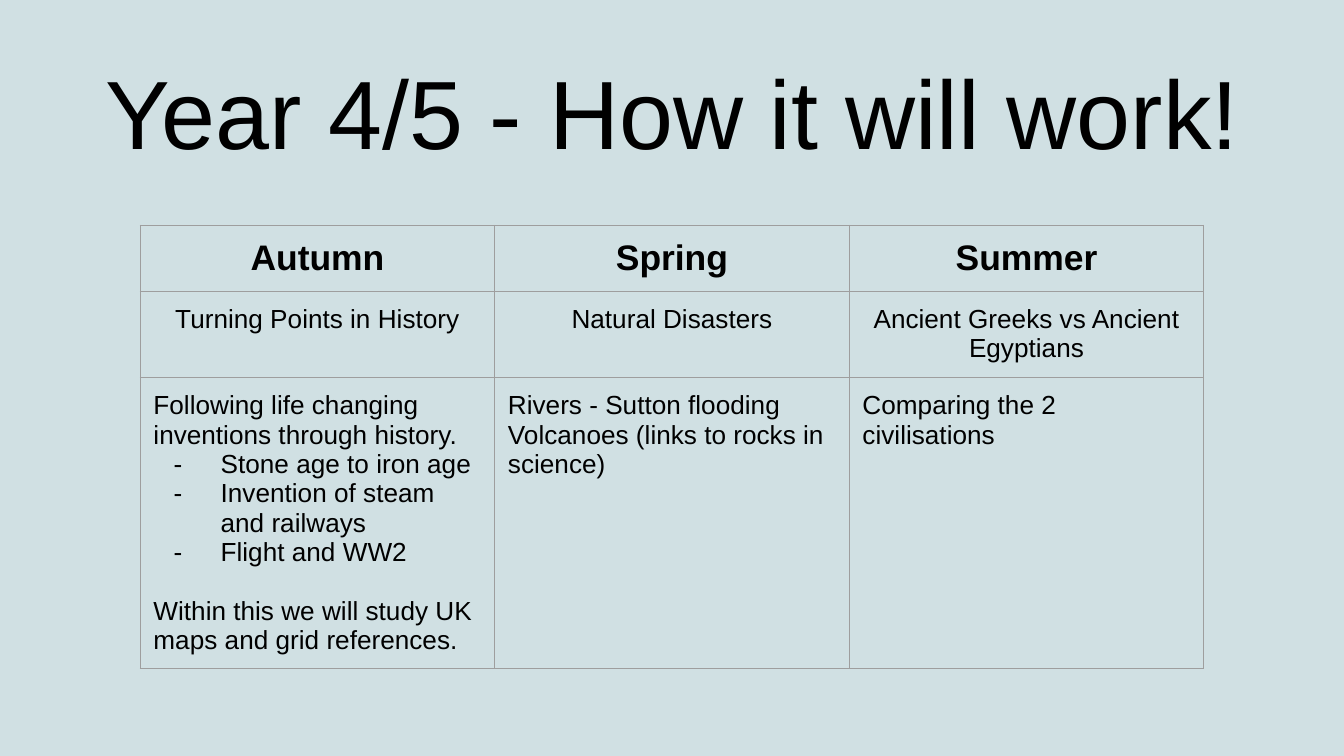
from lxml import etree
from pptx import Presentation
from pptx.dml.color import RGBColor
from pptx.enum import text
from pptx.oxml import parse_xml
from pptx.oxml.ns import nsdecls, qn
from pptx.util import Cm, Pt


def style(para, size, bold=False):
    font = para.font
    font.name, font.size, font.bold = "Arial", Pt(size), bold
    font.color.rgb = RGBColor.from_string("000000")


def fill_in(area, hue):
    area.solid()
    area.fore_color.rgb = RGBColor.from_string(hue)


deck = Presentation()
deck.slide_width, deck.slide_height = Cm(25.4), Cm(14.29)
slide = deck.slides.add_slide(deck.slide_layouts[5])
fill_in(slide.background.fill, "D0E0E3")

# Title
title = slide.shapes.title
title.left, title.top = Cm(0.87), Cm(0.75)
title.width, title.height = Cm(23.67), Cm(2.7)
frame = title.text_frame
frame.text = "Year 4/5 - How it will work!"
frame.word_wrap = True
frame.auto_size = text.MSO_AUTO_SIZE.NONE
frame.vertical_anchor = text.MSO_ANCHOR.BOTTOM
frame.margin_left = frame.margin_right = Cm(0.25)
frame.margin_top = frame.margin_bottom = Cm(0.25)
frame.paragraphs[0].alignment = text.PP_ALIGN.CENTER
style(frame.paragraphs[0], 52)

# Terms, topics and details; a leading "- " marks a list item
rows = [
    ["Autumn", "Spring", "Summer"],
    ["Turning Points in History", "Natural Disasters",
     "Ancient Greeks vs Ancient Egyptians"],
    ["Following life changing inventions through history.\n"
     "- Stone age to iron age\n"
     "- Invention of steam and railways\n"
     "- Flight and WW2\n"
     "Within this we will study UK maps and grid references.",
     "Rivers - Sutton flooding\nVolcanoes (links to rocks in science)",
     "Comparing the 2 civilisations"],
]
highs = [1.25, 1.63, 5.5]
grid = slide.shapes.add_table(3, 3, Cm(2.65), Cm(4.26), Cm(20.1), Cm(sum(highs))).table
grid.first_row = grid.horz_banding = False
for col in grid.columns:
    col.width = Cm(6.7)

for r, (row, high) in enumerate(zip(rows, highs)):
    grid.rows[r].height = Cm(high)
    for c, words in enumerate(row):
        cell = grid.cell(r, c)
        cell.margin_left = cell.margin_right = Cm(0.25)
        cell.margin_top = cell.margin_bottom = Cm(0.25)
        props = cell._tc.get_or_add_tcPr()
        for side in "LRTB":
            props.append(parse_xml(
                f'<a:ln{side} {nsdecls("a")} w="{Pt(0.75)}"><a:solidFill>'
                f'<a:srgbClr val="9E9E9E"/></a:solidFill></a:ln{side}>'))
        cell.fill.background()

        lines = words.split("\n")
        cell.text = "\n".join(line.removeprefix("- ") for line in lines)
        listed = False
        for para, line in zip(cell.text_frame.paragraphs, lines):
            para.alignment = text.PP_ALIGN.LEFT if r == 2 else text.PP_ALIGN.CENTER
            item = line.startswith("- ")
            if item:
                form = para._p.get_or_add_pPr()
                form.set("marL", str(Cm(1.27)))
                form.set("indent", str(-Cm(0.89)))
                tint = etree.SubElement(form, qn("a:buClr"))
                etree.SubElement(tint, qn("a:srgbClr"), val="000000")
                etree.SubElement(form, qn("a:buFont"), typeface="Arial")
                etree.SubElement(form, qn("a:buChar"), char="-")
            elif listed:
                para.space_before = Pt(15.7)
            listed = item
            style(para, 19 if r == 0 else 14, bold=r == 0)

deck.save("out.pptx")
